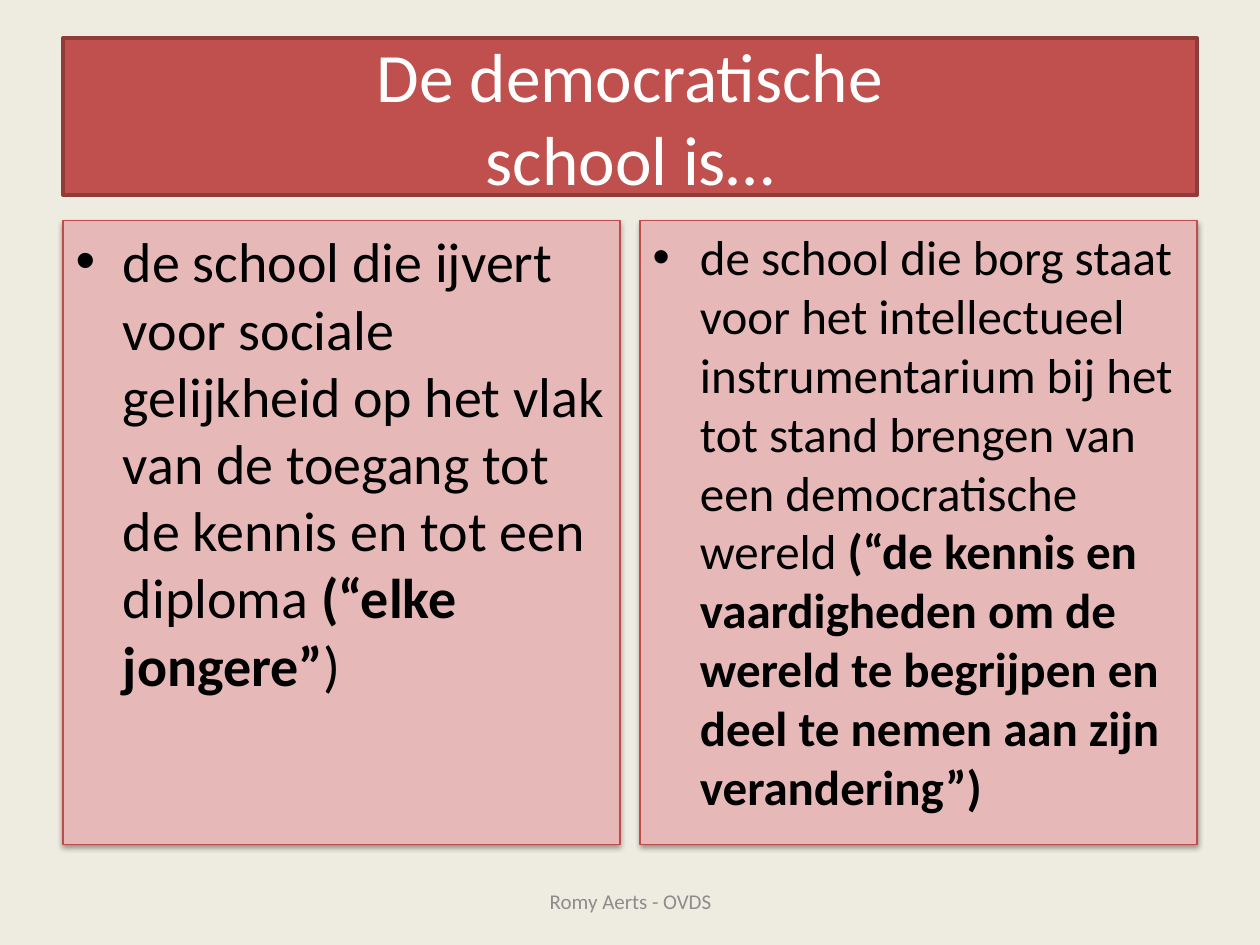
from dataclasses import dataclass

from lxml import etree
from pptx import Presentation
from pptx import util as u
from pptx.dml.color import RGBColor
from pptx.enum import text
from pptx.oxml.ns import qn

COLORS = {
    "background": "EEECE1",
    "title": "C0504D",
    "title_line": "8E3B39",
    "panel": "E6B9B8",
    "panel_line": "BF4C48",
    "light": "FFFFFF",
    "dark": "000000",
    "footer": "8C8C8C",
}
FONT = "Calibri"
MARGIN = 0.5
PANEL_TOP, PANEL_WIDTH, PANEL_HEIGHT = 1.75, 4.42, 4.95


@dataclass
class Panel:
    left: float
    size: float
    runs: list[tuple[str, bool]]


PANELS = [
    Panel(MARGIN, 32, [
        ("de school die ijvert voor sociale gelijkheid op het vlak van de "
         "toegang tot de kennis en tot een diploma ", False),
        ("(“elke jongere”", True),
        (")", False),
    ]),
    Panel(10 - MARGIN - PANEL_WIDTH, 28, [
        ("de school die borg staat voor het intellectueel instrumentarium bij "
         "het tot stand brengen van een democratische wereld ", False),
        ("(“de kennis en vaardigheden om de wereld te begrijpen en deel te "
         "nemen aan zijn verandering”)", True),
    ]),
]


def color(name: str) -> RGBColor:
    return RGBColor.from_string(COLORS[name])


def place(sp, left: float, top: float, width: float, height: float) -> None:
    sp.left, sp.top = u.Inches(left), u.Inches(top)
    sp.width, sp.height = u.Inches(width), u.Inches(height)


def paint(sp, fill: str, line: str, weight: float) -> None:
    sp.fill.solid()
    sp.fill.fore_color.rgb = color(fill)
    sp.line.color.rgb = color(line)
    sp.line.width = u.Pt(weight)


def set_font(p, size: float, name: str) -> None:
    p.font.name = FONT
    p.font.size = u.Pt(size)
    p.font.color.rgb = color(name)


def add_shadow(sp) -> None:
    sp.shadow.inherit = False
    effects = sp._element.spPr.find(qn("a:effectLst"))
    shadow = etree.SubElement(
        effects, qn("a:outerShdw"), blurRad=str(u.Pt(3.1)),
        dist=str(u.Pt(1.6)), dir="5400000", rotWithShape="0")
    shade = etree.SubElement(shadow, qn("a:srgbClr"), val=COLORS["dark"])
    etree.SubElement(shade, qn("a:alpha"), val="38000")


def draw_title(sp) -> None:
    place(sp, MARGIN, 0.3, 10 - 2 * MARGIN, 1.25)
    paint(sp, "title", "title_line", 2)
    tf = sp.text_frame
    tf.text = "De democratische\vschool is…"
    tf.auto_size = text.MSO_AUTO_SIZE.NONE
    tf.vertical_anchor = text.MSO_ANCHOR.MIDDLE
    p = tf.paragraphs[0]
    p.alignment = text.PP_ALIGN.CENTER
    set_font(p, 39.6, "light")


def draw_panel(sp, panel: Panel) -> None:
    place(sp, panel.left, PANEL_TOP, PANEL_WIDTH, PANEL_HEIGHT)
    paint(sp, "panel", "panel_line", 0.75)
    add_shadow(sp)
    tf = sp.text_frame
    tf.auto_size = text.MSO_AUTO_SIZE.NONE
    p = tf.paragraphs[0]
    set_font(p, panel.size, "dark")
    for words, bold in panel.runs:
        r = p.add_run()
        r.text = words
        r.font.bold = bold


def draw_footer(s) -> None:
    sp = s.shapes.add_textbox(
        u.Inches(3.42), u.Inches(6.95), u.Inches(3.17), u.Inches(0.4))
    tf = sp.text_frame
    tf.word_wrap = True
    tf.vertical_anchor = text.MSO_ANCHOR.MIDDLE
    p = tf.paragraphs[0]
    p.text = "Romy Aerts - OVDS"
    p.alignment = text.PP_ALIGN.CENTER
    set_font(p, 12, "footer")


def main() -> None:
    prs = Presentation()
    prs.slide_width, prs.slide_height = u.Inches(10), u.Inches(7.5)
    s = prs.slides.add_slide(prs.slide_layouts.get_by_name("Two Content"))
    s.background.fill.solid()
    s.background.fill.fore_color.rgb = color("background")
    title, *bodies = s.placeholders
    draw_title(title)
    for sp, panel in zip(bodies, PANELS):
        draw_panel(sp, panel)
    draw_footer(s)
    prs.save("out.pptx")


if __name__ == "__main__":
    main()
